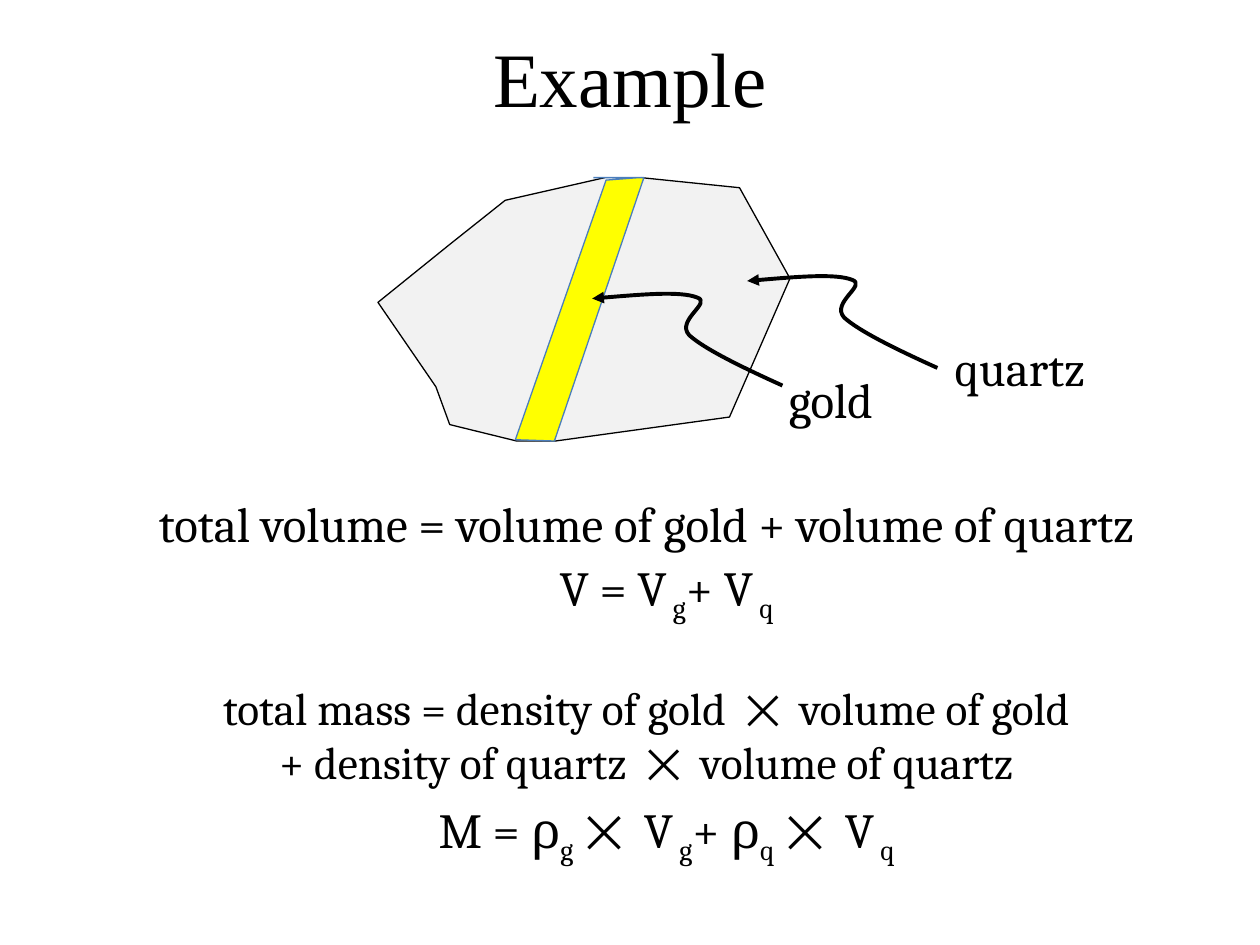
from dataclasses import dataclass

from lxml.etree import SubElement
from pptx import Presentation
from pptx.dml.color import RGBColor
from pptx.enum.text import MSO_ANCHOR, PP_ALIGN
from pptx.oxml.ns import qn
from pptx.util import Inches, Pt

BLACK = "000000"
SUB = -25000  # subscript offset, thousandths of a percent
LINE = 1.17  # line height as a share of the font size


@dataclass
class Label:
    """Lines of text; "_" switches subscript on and off."""
    lines: list[str]
    left: float
    top: float
    width: float = 9.42
    height: float = 0.83
    size: float = 28
    raised: bool = True  # leaves one line free below the text


@dataclass
class Outline:
    points: list[tuple[float, float]]
    fill: str
    line: str


ROCK = Outline([(4.8, 1.41), (4.01, 1.59), (3.57, 1.94), (3, 2.4),
                (3.46, 3.07), (3.57, 3.37), (4.1, 3.5), (4.41, 3.5),
                (5.79, 3.31), (6.27, 2.21), (5.87, 1.49), (5.09, 1.41)],
               "F2F2F2", BLACK)
VEIN = Outline([(4.71, 1.41), (5.11, 1.41), (4.4, 3.5), (4.09, 3.49),
                (4.81, 1.43), (5.07, 1.41)], "FFFF00", "4B7EBC")

# Start point, then three Bezier points for each bend, from the arrow tip
CURVE = [(0, 0.06), (0.35, 0.03), (0.7, 0), (0.83, 0.05),
         (0.96, 0.09), (0.66, 0.23), (0.77, 0.35),
         (0.89, 0.46), (1.2, 0.61), (1.51, 0.75)]
ARROWS = [(4.7, 2.31), (5.93, 2.17)]

LABELS = [
    Label(["gold"], 5.93, 2.75, 1.33, raised=False),
    Label(["quartz"], 7.43, 2.5, 1.33, raised=False),
    Label(["total volume = volume of gold + volume of quartz"],
          0.42, 3.92, height=0.92),
    Label(["V = V_ g_+ V_ q"], 0.58, 4.5),
    Label(["total mass = density of gold  ⨉  volume of gold",
           "+ density of quartz  ⨉  volume of quartz"],
          0.42, 5.58, height=0.92, size=25.9),
    Label(["M = ρ_g  _⨉  V_ g_+ ρ_q  _⨉  V_ q"], 0.58, 6.42),
]


def color(code: str) -> RGBColor:
    return RGBColor.from_string(code)


def write(frame, lines: list[str], *, size: float, font: str = "Cambria",
          ink: str = BLACK) -> None:
    frame.word_wrap = True
    frame.vertical_anchor = MSO_ANCHOR.MIDDLE
    for i, line in enumerate(lines):
        para = frame.add_paragraph() if i else frame.paragraphs[0]
        para.alignment = PP_ALIGN.CENTER
        for j, part in enumerate(line.split("_")):
            if not part:
                continue
            run = para.add_run()
            run.text = part
            run.font.size = Pt(size)
            run.font.name = font
            run.font.color.rgb = color(ink)
            if j % 2:
                run.font._element.set("baseline", str(SUB))


def draw_label(slide, label: Label) -> None:
    box = slide.shapes.add_textbox(Inches(label.left), Inches(label.top),
                                   Inches(label.width), Inches(label.height))
    if label.raised:
        box.text_frame.margin_bottom = Inches(0.05) + Pt(label.size * LINE)
    write(box.text_frame, label.lines, size=label.size)


def trace(slide, points: list[tuple[float, float]], line: str, width: float):
    """Draw an open path through the points."""
    spots = [(Inches(x), Inches(y)) for x, y in points]
    pen = slide.shapes.build_freeform(*spots[0])
    pen.add_line_segments(spots[1:], close=False)
    shape = pen.convert_to_shape()
    shape.shadow.inherit = False
    shape.line.color.rgb = color(line)
    shape.line.width = Pt(width)
    return shape


def draw_outline(slide, part: Outline) -> None:
    shape = trace(slide, part.points, part.line, 0.75)
    shape.fill.solid()
    shape.fill.fore_color.rgb = color(part.fill)


def draw_arrow(slide, left: float, top: float) -> None:
    shape = trace(slide, [(left + x, top + y) for x, y in CURVE], BLACK, 2.25)
    shape.fill.background()
    bend(shape)
    SubElement(shape.line._get_or_add_ln(), qn("a:headEnd"), type="triangle")


def bend(shape) -> None:
    """Turn each three straight segments into one Bezier curve."""
    route = next(shape._element.iter(qn("a:path")))
    steps = route.findall(qn("a:lnTo"))
    for i in range(0, len(steps), 3):
        curve = SubElement(route, qn("a:cubicBezTo"))
        for step in steps[i:i + 3]:
            curve.append(step[0])
            route.remove(step)


def main() -> None:
    deck = Presentation()
    deck.slide_width, deck.slide_height = Inches(10), Inches(7.5)
    slide = deck.slides.add_slide(deck.slide_layouts[5])

    draw_outline(slide, ROCK)
    title = slide.shapes.title
    title.left, title.top = Inches(0.5), Inches(0.17)
    title.width, title.height = Inches(9), Inches(0.88)
    write(title.text_frame, ["Example"], size=44, font="Times New Roman")

    draw_outline(slide, VEIN)
    for left, top in ARROWS:
        draw_arrow(slide, left, top)
    for label in LABELS:
        draw_label(slide, label)
    deck.save("out.pptx")


if __name__ == "__main__":
    main()
